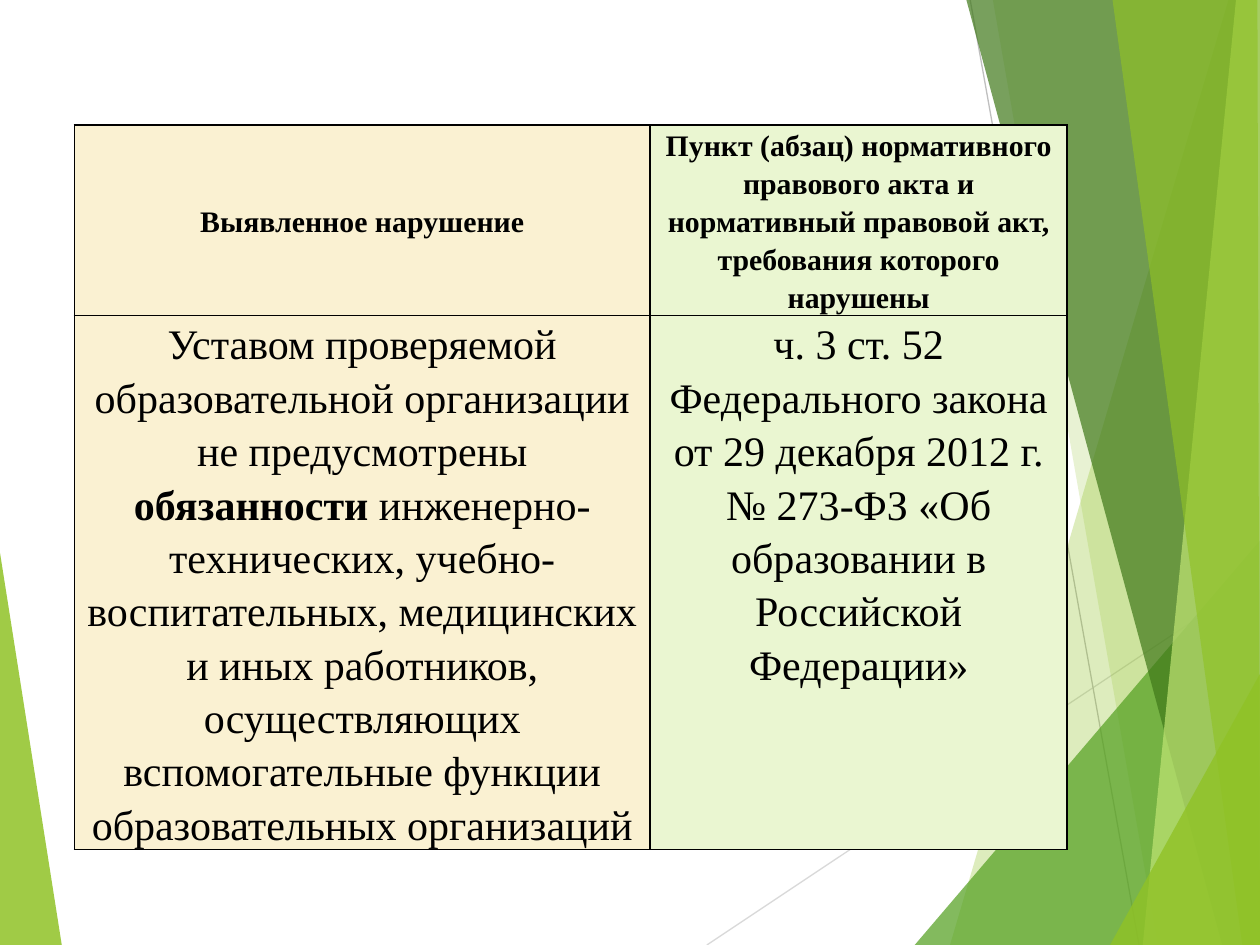
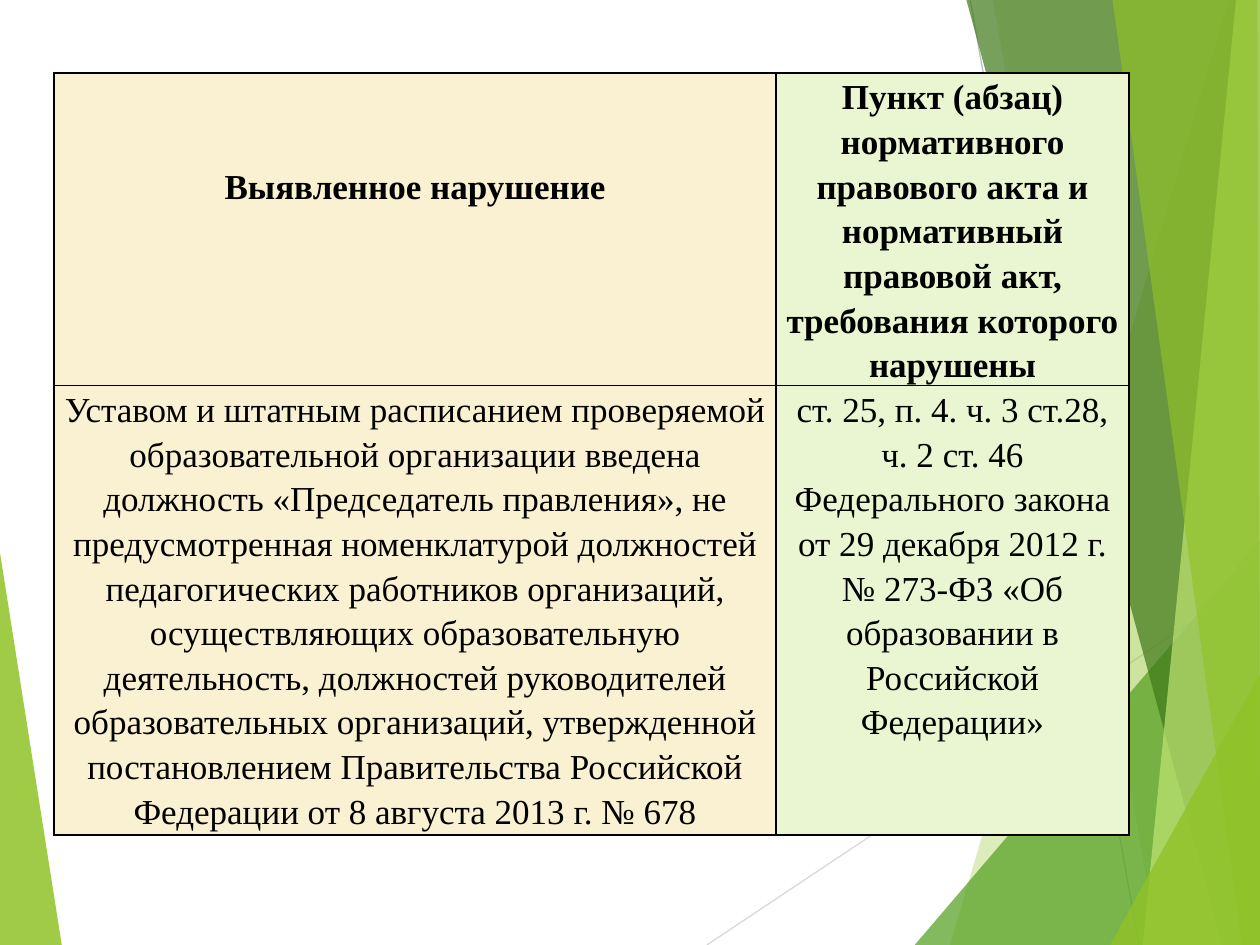
"""Builds two slides that list violations beside the legal acts they breach."""
from lxml import etree
from pptx import Presentation
from pptx import util as u
from pptx.dml.color import RGBColor
from pptx.enum import shapes, text
from pptx.oxml.ns import qn

WIDTH, HEIGHT = u.Inches(10), u.Inches(7.5)
FONT = "Times New Roman"
LINE_SPACING = 1.15
LINE_PITCH = 1.28
COLORS = {
    "lime": "90C226", "green": "54A021", "forest": "3F7819", "pale": "C0E474",
    "light_gray": "D9D9D9", "gray": "BFBFBF", "black": "000000",
    "violation": "FAF1D2", "act": "EAF6D1",
}
RAYS = [
    ("light_gray", (56.1, 100), (100, 61)),
    ("gray", (77, 0), (90.4, 100)),
]
SHARDS = [
    ("lime", 85, [(0, 58.5), (4.9, 100), (0, 100)]),
    ("lime", 30, [(97.5, 0), (75.4, 100), (100, 100), (100, 0)]),
    ("lime", 20, [(78.8, 0), (91.9, 100), (100, 100), (100, 0)]),
    ("green", 72, [(72.6, 100), (100, 57.2), (100, 100)]),
    ("forest", 70, [(76.7, 0), (97, 100), (100, 100), (100, 0)]),
    ("pale", 70, [(98.1, 0), (90.7, 100), (100, 100), (100, 0)]),
    ("lime", 65, [(88.3, 0), (98.6, 100), (100, 100), (99.8, 0)]),
    ("lime", 80, [(88.1, 100), (100, 71.3), (100, 100)]),
]
HEADERS = [
    "Выявленное нарушение",
    "Пункт (абзац) нормативного правового акта и нормативный правовой акт, "
    "требования которого нарушены",
]
LAW = "Федерального закона от 29 декабря 2012 г. № 273-ФЗ «Об образовании в Российской Федерации»"
TABLES = [
    {
        "corner": (5.9, 13.2), "cols": (45.7, 33.1), "rows": (16.8, 46),
        "header_size": 17, "body_size": 24,
        "body": [
            "Уставом проверяемой образовательной организации не предусмотрены "
            "*обязанности* инженерно-технических, учебно-воспитательных, медицинских "
            "и иных работников, осуществляющих вспомогательные функции "
            "образовательных организаций",
            f"ч. 3 ст. 52 {LAW}",
        ],
    },
    {
        "corner": (4.3, 7.7), "cols": (57.3, 28), "rows": (19.1, 47.6),
        "header_size": 20, "body_size": 20,
        "body": [
            "Уставом и штатным расписанием проверяемой образовательной организации "
            "введена должность «Председатель правления», не предусмотренная "
            "номенклатурой должностей педагогических работников организаций, "
            "осуществляющих образовательную деятельность, должностей руководителей "
            "образовательных организаций, утвержденной постановлением Правительства "
            "Российской Федерации от 8 августа 2013 г. № 678",
            f"ст. 25, п. 4. ч. 3 ст.28, ч. 2 ст. 46 {LAW}",
        ],
    },
]


def across(percent):
    """Return a share of the slide's width."""
    return u.Emu(round(WIDTH * percent / 100))


def down(percent):
    """Return a share of the slide's height."""
    return u.Emu(round(HEIGHT * percent / 100))


def rgb(name):
    """Return the named colour."""
    return RGBColor.from_string(COLORS[name])


def add_ray(s, color, start, end):
    """Draw a thin line between two points."""
    sp = s.shapes.add_connector(
        shapes.MSO_CONNECTOR.STRAIGHT,
        across(start[0]), down(start[1]), across(end[0]), down(end[1]))
    sp.line.color.rgb = rgb(color)
    sp.line.width = u.Pt(0.75)
    etree.SubElement(sp.element.spPr, qn("a:effectLst"))


def add_shard(s, color, opacity, corners):
    """Draw a translucent polygon."""
    points = [(across(x), down(y)) for x, y in corners]
    builder = s.shapes.build_freeform(*points[0])
    builder.add_line_segments(points[1:], close=True)
    sp = builder.convert_to_shape()
    sp.shadow.inherit = False
    sp.fill.solid()
    sp.fill.fore_color.rgb = rgb(color)
    tint = sp.element.spPr.find(f"{qn('a:solidFill')}/{qn('a:srgbClr')}")
    etree.SubElement(tint, qn("a:alpha"), val=str(opacity * 1000))
    sp.line.fill.background()


def add_backdrop(s):
    """Draw the rays and shards that every slide shares."""
    add_shard(s, *SHARDS[0])
    for ray in RAYS:
        add_ray(s, *ray)
    for shard in SHARDS[1:]:
        add_shard(s, *shard)


def add_borders(cell):
    """Outline a table cell in black."""
    props = cell._tc.get_or_add_tcPr()
    for side in ("lnL", "lnR", "lnT", "lnB"):
        line = etree.SubElement(props, qn(f"a:{side}"), w=str(u.Pt(1)))
        fill = etree.SubElement(line, qn("a:solidFill"))
        etree.SubElement(fill, qn("a:srgbClr"), val=COLORS["black"])


def fill_cell(cell, words, color, size, bold):
    """Style a cell and write its text, with *starred* words in bold."""
    add_borders(cell)
    cell.fill.solid()
    cell.fill.fore_color.rgb = rgb(color)
    cell.margin_left = cell.margin_right = u.Inches(0.05)
    cell.margin_top = cell.margin_bottom = 0
    p = cell.text_frame.paragraphs[0]
    p.alignment = text.PP_ALIGN.CENTER
    p.line_spacing = LINE_SPACING
    p.font.name = FONT
    p.font.size = u.Pt(size)
    p.font.color.rgb = rgb("black")
    for i, part in enumerate(words.split("*")):
        r = p.add_run()
        r.text = part
        r.font.bold = bold or i % 2 == 1


def add_violation_table(s, corner, cols, rows, header_size, body_size, body):
    """Add a table with a violation column and a legal act column."""
    table = s.shapes.add_table(
        2, 2, across(corner[0]), down(corner[1]),
        across(sum(cols)), down(sum(rows))).table
    table.first_row = table.horz_banding = False
    for column, share in zip(table.columns, cols):
        column.width = across(share)
    for row, share in zip(table.rows, rows):
        row.height = down(share)
    for i, color in enumerate(("violation", "act")):
        fill_cell(table.cell(0, i), HEADERS[i], color, header_size, True)
        fill_cell(table.cell(1, i), body[i], color, body_size, False)
    table.cell(0, 0).margin_top = u.Pt(2 * header_size * LINE_PITCH)


def main():
    """Build and save the presentation."""
    prs = Presentation()
    prs.slide_width, prs.slide_height = WIDTH, HEIGHT
    for table in TABLES:
        s = prs.slides.add_slide(prs.slide_layouts[6])
        add_backdrop(s)
        add_violation_table(s, **table)
    prs.save("out.pptx")


if __name__ == "__main__":
    main()
